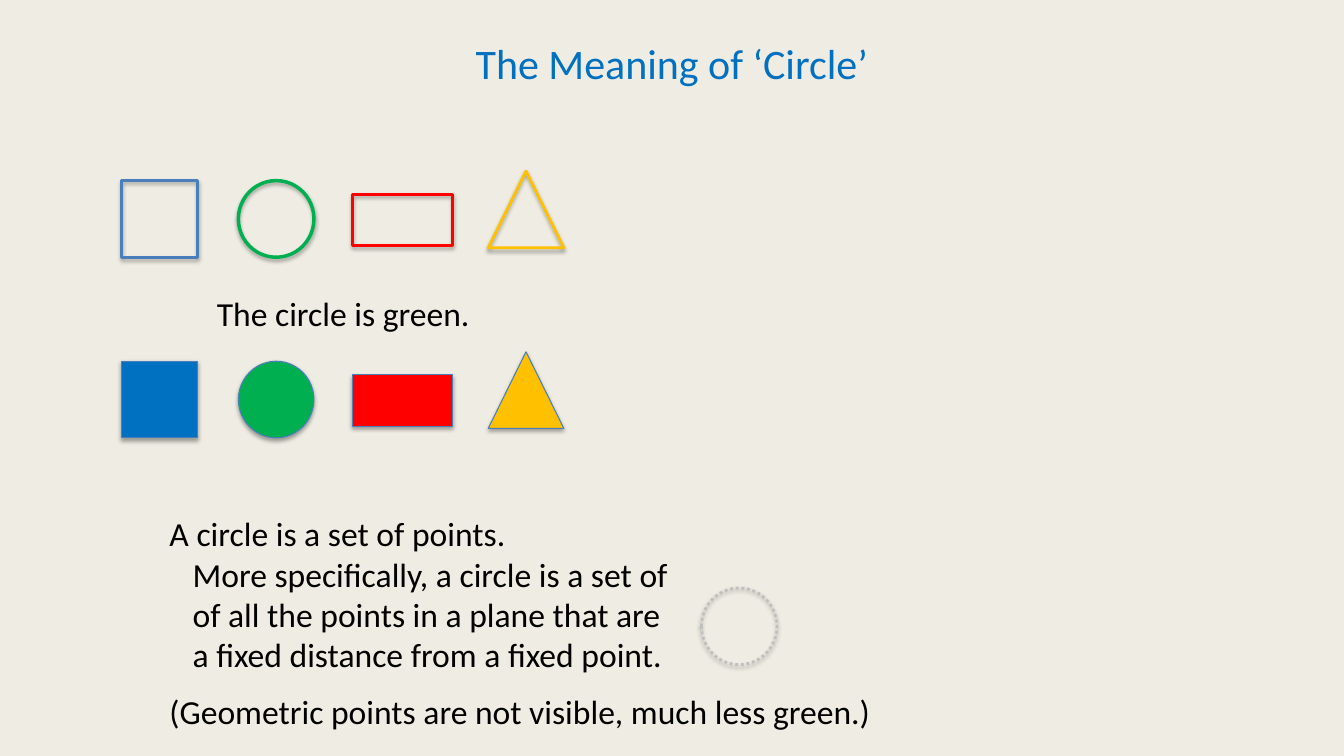
from lxml.etree import SubElement
from pptx import Presentation
from pptx.dml.color import RGBColor
from pptx.enum.dml import MSO_LINE as Dash
from pptx.enum.shapes import MSO_SHAPE as Form
from pptx.enum.text import MSO_ANCHOR as Anchor, MSO_AUTO_SIZE as Fit, PP_ALIGN as Align
from pptx.oxml.ns import qn
from pptx.util import Pt

PX = 9525
PAPER = RGBColor(0xEF, 0xED, 0xE3)
BLACK = RGBColor(0x00, 0x00, 0x00)
BLUE = RGBColor(0x00, 0x70, 0xC0)
STEEL = RGBColor(0x4B, 0x7E, 0xBC)
GREEN = RGBColor(0x00, 0xB0, 0x50)
RED = RGBColor(0xFF, 0x00, 0x00)
GOLD = RGBColor(0xFF, 0xC0, 0x00)
GREY = RGBColor(0xBF, 0xBF, 0xBF)


class Deck:
    """Holds the style and the current slide, and adds elements to it."""

    font = "Calibri"
    size = 24
    indent = 22

    def __init__(self, width, height):
        self.show = Presentation()
        self.show.slide_width = width * PX
        self.show.slide_height = height * PX
        self.slide = self.show.slides.add_slide(self.show.slide_layouts[6])
        fill = self.slide.background.fill
        fill.solid()
        fill.fore_color.rgb = PAPER

    def text(self, box, lines, size=size, color=BLACK):
        frame = self.slide.shapes.add_textbox(*(n * PX for n in box)).text_frame
        frame.word_wrap = True
        frame.auto_size = Fit.SHAPE_TO_FIT_TEXT
        frame.text = "\n".join(lines)
        for para in frame.paragraphs:
            for run in para.runs:
                run.font.name = self.font
                run.font.size = Pt(size)
                run.font.color.rgb = color
        return frame

    def title(self, box, words):
        frame = self.text(box, [words], 30, BLUE)
        frame.auto_size = Fit.NONE
        frame.vertical_anchor = Anchor.MIDDLE
        frame.paragraphs[0].alignment = Align.CENTER

    def inset(self, paras):
        for para in paras:
            para._p.get_or_add_pPr().set("marL", str(self.indent * PX))

    def shape(self, form, box, edge, weight, fill=None, dash=None):
        item = self.slide.shapes.add_shape(form, *(n * PX for n in box))
        if fill is None:
            item.fill.background()
        else:
            item.fill.solid()
            item.fill.fore_color.rgb = fill
        item.line.color.rgb = edge
        item.line.width = Pt(weight)
        if dash is not None:
            item.line.dash_style = dash
        self.shade(item)

    def shade(self, item):
        item.shadow.inherit = False
        group = item._element.spPr.find(qn("a:effectLst"))
        outer = SubElement(group, qn("a:outerShdw"), blurRad=str(Pt(3.1)),
                           dist=str(Pt(1.8)), dir="5400000", rotWithShape="0")
        tint = SubElement(outer, qn("a:srgbClr"), val="000000")
        SubElement(tint, qn("a:alpha"), val="35000")


def main():
    deck = Deck(1280, 720)
    deck.text((197, 274, 277, 48), ["The circle is green."])
    body = deck.text((152, 484, 720, 220), [
        "A circle is a set of points.",
        "More specifically, a circle is a set of",
        "of all the points in a plane that are",
        "a fixed distance from a fixed point.",
        "(Geometric points are not visible, much less green.)",
    ])
    deck.inset(body.paragraphs[1:4])
    body.paragraphs[4].space_before = Pt(12)

    drop = 172
    forms = [
        (Form.RECTANGLE, (116, 172, 72, 73), STEEL, 2, BLUE),
        (Form.OVAL, (227, 172, 72, 73), GREEN, 2.5, GREEN),
        (Form.RECTANGLE, (336, 185, 95, 49), RED, 2, RED),
        (Form.ISOSCELES_TRIANGLE, (465, 163, 72, 73), GOLD, 2, GOLD),
    ]
    for form, box, edge, weight, fill in forms:
        left, top, width, height = box
        deck.shape(form, box, edge, weight)
        deck.shape(form, (left, top + drop, width, height), STEEL, 0.75, fill)
    deck.shape(Form.OVAL, (668, 560, 72, 73), GREY, 2, dash=Dash.ROUND_DOT)

    deck.title((64, 0, 1152, 120), "The Meaning of ‘Circle’")
    deck.show.save("out.pptx")


if __name__ == "__main__":
    main()
